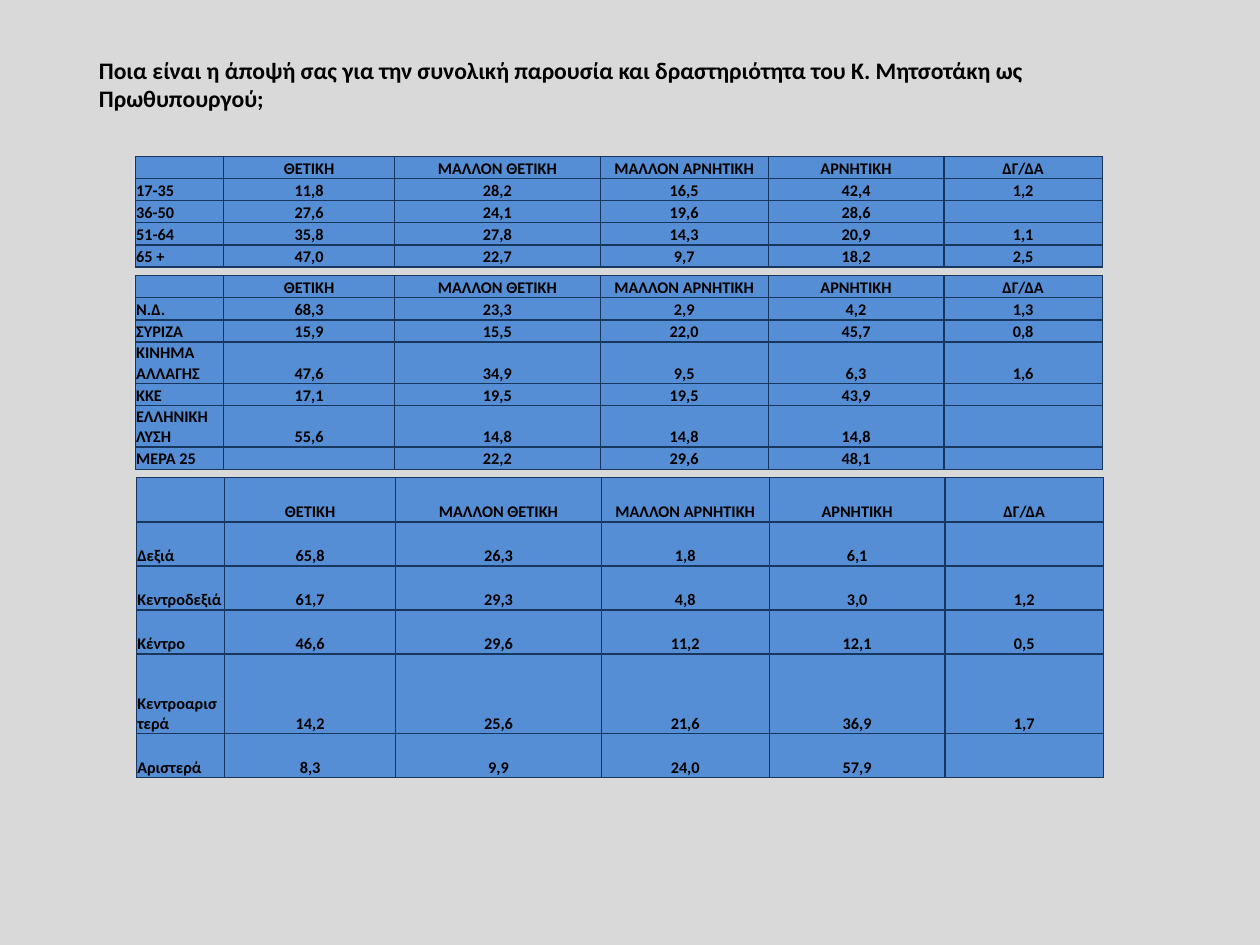
from lxml import etree
from pptx import Presentation
from pptx.dml.color import RGBColor
from pptx.enum.text import MSO_ANCHOR, PP_ALIGN
from pptx.oxml.ns import qn
from pptx.util import Inches, Pt

# Content
TITLE = ("Ποια είναι η άποψή σας για την συνολική παρουσία και δραστηριότητα "
         "του Κ. Μητσοτάκη ως Πρωθυπουργού;")
HEADER = ("", "ΘΕΤΙΚΗ", "ΜΑΛΛΟΝ ΘΕΤΙΚΗ", "ΜΑΛΛΟΝ ΑΡΝΗΤΙΚΗ", "ΑΡΝΗΤΙΚΗ", "ΔΓ/ΔΑ")
AGE_ROWS = [
    ("17-35", "11,8", "28,2", "16,5", "42,4", "1,2"),
    ("36-50", "27,6", "24,1", "19,6", "28,6", ""),
    ("51-64", "35,8", "27,8", "14,3", "20,9", "1,1"),
    ("65 +", "47,0", "22,7", "9,7", "18,2", "2,5"),
]
PARTY_ROWS = [
    ("Ν.Δ.", "68,3", "23,3", "2,9", "4,2", "1,3"),
    ("ΣΥΡΙΖΑ", "15,9", "15,5", "22,0", "45,7", "0,8"),
    ("ΚΙΝΗΜΑ ΑΛΛΑΓΗΣ", "47,6", "34,9", "9,5", "6,3", "1,6"),
    ("ΚΚΕ", "17,1", "19,5", "19,5", "43,9", ""),
    ("ΕΛΛΗΝΙΚΗ ΛΥΣΗ", "55,6", "14,8", "14,8", "14,8", ""),
    ("ΜΕΡΑ 25", "", "22,2", "29,6", "48,1", ""),
]
POSITION_ROWS = [
    ("Δεξιά", "65,8", "26,3", "1,8", "6,1", ""),
    ("Κεντροδεξιά", "61,7", "29,3", "4,8", "3,0", "1,2"),
    ("Κέντρο", "46,6", "29,6", "11,2", "12,1", "0,5"),
    ("Κεντροαριστερά", "14,2", "25,6", "21,6", "36,9", "1,7"),
    ("Αριστερά", "8,3", "9,9", "24,0", "57,9", ""),
]

# Left, top, usual row height, height of two-line rows, two-line labels, rows
TABLES = [
    (1.27, 1.47, 1.04 / 5, 0.39, (), AGE_ROWS),
    (1.27, 2.59, 1.04 / 5, 0.39, ("ΚΙΝΗΜΑ ΑΛΛΑΓΗΣ", "ΕΛΛΗΝΙΚΗ ΛΥΣΗ"), PARTY_ROWS),
    (1.28, 4.49, 2.07 / 5, 0.75, ("Κεντροαριστερά",), POSITION_ROWS),
]
COLUMN_WIDTHS = (0.83, 1.61, 1.93, 1.58, 1.65, 1.49)

FONT = "Calibri"
BLACK = RGBColor(0x00, 0x00, 0x00)
BACKGROUND = RGBColor(0xD9, 0xD9, 0xD9)
CELL_BLUE = RGBColor(0x55, 0x8E, 0xD5)
BORDER_NAVY = RGBColor(0x17, 0x37, 0x5E)
CELL_SIZE = Pt(11)


def write(paragraph, text, size):
    paragraph.text = text
    paragraph.font.name = FONT
    paragraph.font.size = size
    paragraph.font.bold = True
    paragraph.font.color.rgb = BLACK
    if not text:
        # An empty cell keeps its line height through the end mark
        etree.SubElement(paragraph._p, qn("a:endParaRPr"), sz=str(int(size.pt * 100)))


def add_borders(cell):
    properties = cell._tc.get_or_add_tcPr()
    for position, side in enumerate(("lnL", "lnR", "lnT", "lnB")):
        line = etree.Element(qn(f"a:{side}"), w=str(Pt(1)))
        fill = etree.SubElement(line, qn("a:solidFill"))
        etree.SubElement(fill, qn("a:srgbClr"), val=str(BORDER_NAVY))
        properties.insert(position, line)


def format_cell(cell, text, alignment):
    cell.margin_left = cell.margin_top = cell.margin_right = Inches(0.01)
    cell.margin_bottom = 0
    cell.vertical_anchor = MSO_ANCHOR.BOTTOM
    cell.fill.solid()
    cell.fill.fore_color.rgb = CELL_BLUE
    add_borders(cell)
    paragraph = cell.text_frame.paragraphs[0]
    paragraph.alignment = alignment
    write(paragraph, text, CELL_SIZE)


def add_poll_table(slide, left, top, row_height, tall_height, tall_labels, body):
    rows = [HEADER] + body
    heights = [tall_height if row[0] in tall_labels else row_height for row in rows]
    table = slide.shapes.add_table(
        len(rows), len(HEADER), Inches(left), Inches(top),
        Inches(sum(COLUMN_WIDTHS)), Inches(sum(heights))).table
    for column, width in zip(table.columns, COLUMN_WIDTHS):
        column.width = Inches(width)
    for row_index, (row, height) in enumerate(zip(rows, heights)):
        table.rows[row_index].height = Inches(height)
        for column_index, text in enumerate(row):
            alignment = PP_ALIGN.CENTER if column_index else PP_ALIGN.LEFT
            format_cell(table.cell(row_index, column_index), text, alignment)


def main():
    presentation = Presentation()
    presentation.slide_width = Inches(11.84)
    presentation.slide_height = Inches(8.88)
    slide = presentation.slides.add_slide(presentation.slide_layouts[6])
    slide.background.fill.solid()
    slide.background.fill.fore_color.rgb = BACKGROUND

    # Question
    title = slide.shapes.add_textbox(Inches(0.81), Inches(0.47), Inches(10.21), Inches(0.64))
    frame = title.text_frame
    frame.word_wrap = True
    frame.vertical_anchor = MSO_ANCHOR.MIDDLE
    frame.margin_left = frame.margin_right = Inches(0.12)
    frame.margin_top = frame.margin_bottom = Inches(0.06)
    write(frame.paragraphs[0], TITLE, Pt(16))

    # Answers by age, party and political position
    for table in TABLES:
        add_poll_table(slide, *table)

    presentation.save("out.pptx")


if __name__ == "__main__":
    main()
